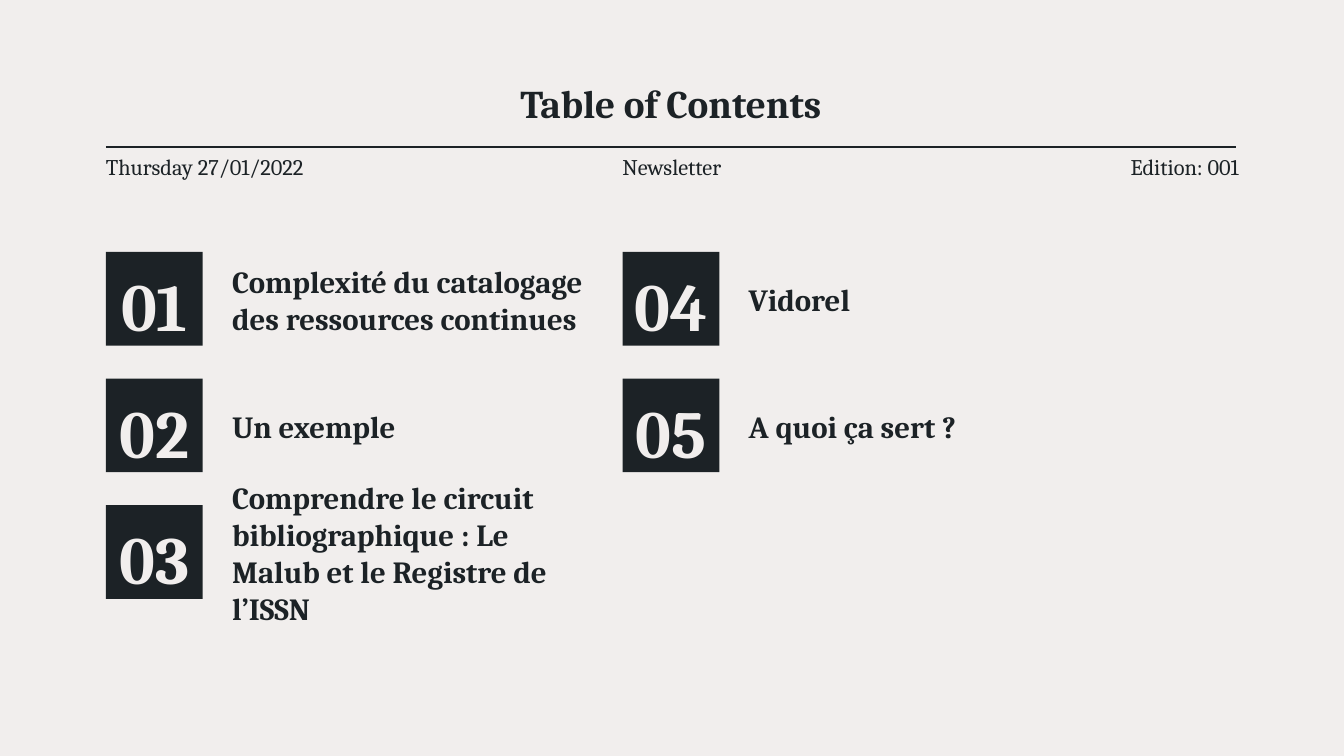
from pptx import Presentation
from pptx.dml.color import RGBColor
from pptx.enum.shapes import MSO_CONNECTOR, MSO_SHAPE
from pptx.enum.text import MSO_ANCHOR, PP_ALIGN
from pptx.util import Cm, Pt
from lxml.etree import SubElement
from pptx.oxml.ns import qn

INK = "1C2226"
PAPER = "F1EEED"
FONT = "Cambria"

LEFT = 2.67
TILE_WIDTH, TILE_HEIGHT = 2.44, 2.36
ROW_STEP, COLUMN_STEP = 3.19, 13.02
ROWS_PER_COLUMN = 3

CHAPTERS = [
    [
        "Complexité du catalogage des ressources continues",
        "Un exemple",
        "Comprendre le circuit bibliographique : Le Malub et le Registre de l’ISSN",
    ],
    ["Vidorel", "A quoi ça sert ?"],
]


def color(hex_string):
    return RGBColor.from_string(hex_string)


def write(shape, text, size=22, bold=False, ink=INK, align=PP_ALIGN.LEFT,
          spacing=1.0, side=0, vertical=0):
    frame = shape.text_frame
    frame.word_wrap = True
    frame.vertical_anchor = MSO_ANCHOR.MIDDLE
    frame.margin_left = frame.margin_right = Cm(side)
    frame.margin_top = frame.margin_bottom = Cm(vertical)
    para = frame.paragraphs[0]
    para.alignment = align
    para.line_spacing = spacing
    span = para.add_run()
    span.text = text
    span.font.name = FONT
    span.font.size = Pt(size)
    span.font.bold = bold
    span.font.color.rgb = color(ink)


def add_text(page, box, text, **style):
    write(page.shapes.add_textbox(*map(Cm, box)), text, **style)


def add_header(page, left, top, width):
    # Title
    add_text(page, (left + 3.25, top, 21.97, 1.57), "Table of Contents",
             size=28, bold=True, align=PP_ALIGN.CENTER, side=0.33, vertical=0.33)

    # Rule under the title
    rule_top = top + 1.91
    rule = page.shapes.add_connector(
        MSO_CONNECTOR.STRAIGHT, Cm(left), Cm(rule_top), Cm(left + width), Cm(rule_top))
    rule.line.color.rgb = color(INK)
    rule.line.width = Pt(1.5)
    SubElement(rule._element.spPr, qn("a:effectLst"))

    # Date, publication and edition
    details = [
        (0, "Thursday 27/01/2022", PP_ALIGN.LEFT),
        (11.4, "Newsletter", PP_ALIGN.CENTER),
        (22.83, "Edition: 001", PP_ALIGN.RIGHT),
    ]
    for offset, text, align in details:
        add_text(page, (left + offset, rule_top + 0.17, 5.72, 0.64), text,
                 size=16, align=align, vertical=0.33)


def add_chapter(page, left, top, number, heading):
    # Numbered tile
    tile = page.shapes.add_shape(
        MSO_SHAPE.RECTANGLE, Cm(left), Cm(top), Cm(TILE_WIDTH), Cm(TILE_HEIGHT))
    tile.shadow.inherit = False
    tile.fill.solid()
    tile.fill.fore_color.rgb = color(INK)
    tile.line.fill.background()
    write(tile, f"{number:02d}", size=48, bold=True, ink=PAPER,
          align=PP_ALIGN.CENTER, spacing=1.15)

    # Heading, level with the middle of the tile
    add_text(page, (left + 3.18, top + 0.02, 8.97, TILE_HEIGHT), heading, bold=True)


def add_chapters(page, left, top):
    for column, headings in enumerate(CHAPTERS):
        for row, heading in enumerate(headings):
            add_chapter(page, left + column * COLUMN_STEP, top + row * ROW_STEP,
                        column * ROWS_PER_COLUMN + row + 1, heading)


def main():
    deck = Presentation()
    deck.slide_width, deck.slide_height = Cm(33.87), Cm(19.05)
    page = deck.slides.add_slide(deck.slide_layouts[6])
    page.background.fill.solid()
    page.background.fill.fore_color.rgb = color(PAPER)
    add_header(page, LEFT, 1.8, 28.47)
    add_chapters(page, LEFT, 6.35)
    deck.save("out.pptx")


if __name__ == "__main__":
    main()
